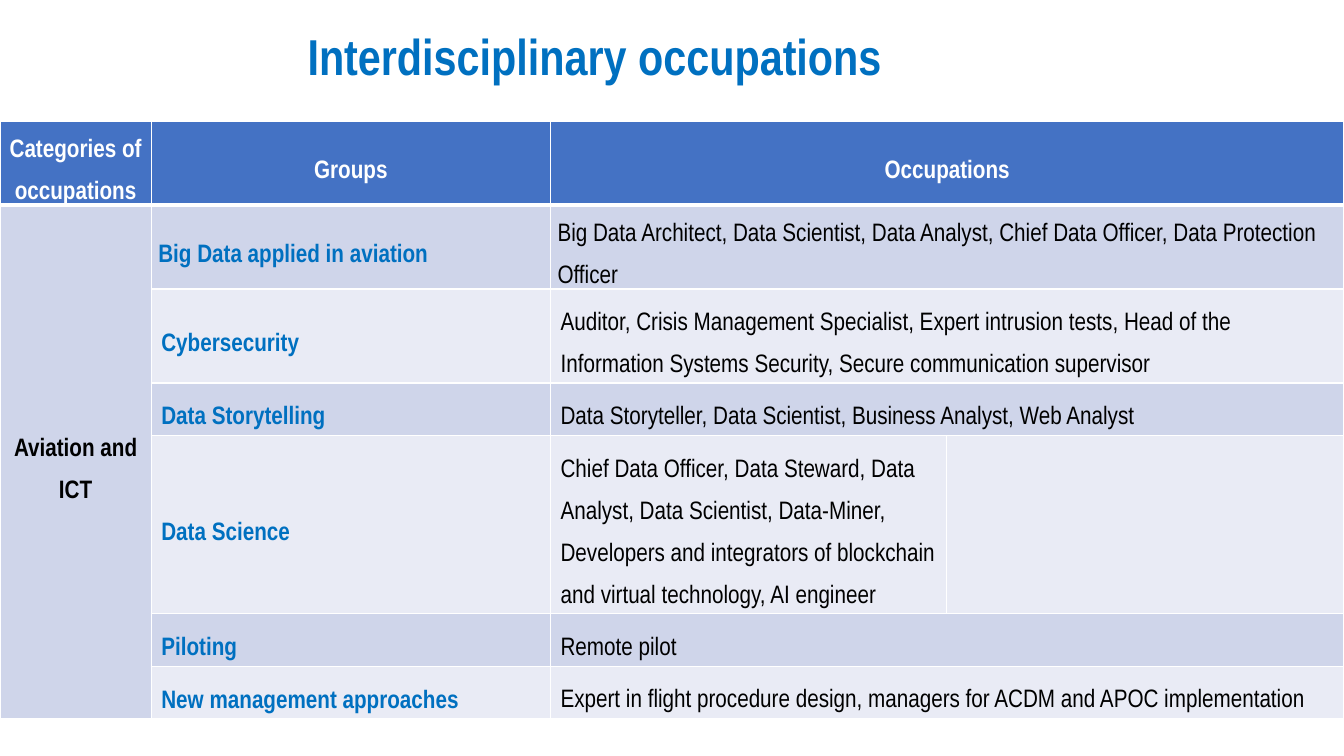
from lxml import etree
from pptx import Presentation
from pptx import util as u
from pptx.dml.color import RGBColor
from pptx.enum import text
from pptx.oxml import ns

FONT = "Arial Narrow"
BLUE = RGBColor(0x00, 0x70, 0xC0)
HEADER = RGBColor(0x44, 0x72, 0xC4)
BAND_DARK = RGBColor(0xCF, 0xD5, 0xEA)
BAND_LIGHT = RGBColor(0xE9, 0xEB, 0xF5)
WHITE = RGBColor(0xFF, 0xFF, 0xFF)
BLACK = RGBColor(0x00, 0x00, 0x00)

HEADINGS = ["Categories of occupations", "Groups", "Occupations"]
CATEGORY = "Aviation and ICT"
GROUPS = [
    ("Big Data applied in aviation",
     "Big Data Architect, Data Scientist, Data Analyst, Chief Data Officer, "
     "Data Protection Officer"),
    ("Cybersecurity",
     "Auditor, Crisis Management Specialist, Expert intrusion tests, Head of the "
     "Information Systems Security, Secure communication supervisor"),
    ("Data Storytelling",
     "Data Storyteller, Data Scientist, Business Analyst, Web Analyst"),
    ("Data Science",
     "Chief Data Officer, Data Steward, Data Analyst, Data Scientist, Data-Miner, "
     "Developers and integrators of blockchain and virtual technology, AI engineer"),
    ("Piloting", "Remote pilot"),
    ("New management approaches",
     "Expert in flight procedure design, managers for ACDM and APOC implementation"),
]
SPLIT_GROUP = "Data Science"  # its occupations fill only one of the two columns
COL_WIDTHS = [1.5, 3.96, 3.93, 3.94]
ROW_HEIGHTS = [0.83, 0.83, 0.93, 0.52, 1.77, 0.52, 0.52]


def write(tf, words, size=18, color=BLACK, bold=False,
          align=text.PP_ALIGN.LEFT, spacing=None):
    p = tf.paragraphs[0]
    p.alignment = align
    if spacing:
        p.line_spacing = u.Pt(spacing)
    r = p.add_run()
    r.text = words
    r.font.name, r.font.size, r.font.bold = FONT, u.Pt(size), bold
    r.font.color.rgb = color


def style_cell(cell, fill, bottom=1):
    """White borders, then the fill."""
    tcPr = cell._tc.get_or_add_tcPr()
    for side, width in (("L", 1), ("R", 1), ("T", 1), ("B", bottom)):
        ln = etree.SubElement(tcPr, ns.qn("a:ln" + side), w=str(u.Pt(width)))
        line_fill = etree.SubElement(ln, ns.qn("a:solidFill"))
        etree.SubElement(line_fill, ns.qn("a:srgbClr"), val=str(WHITE))
    cell.fill.solid()
    cell.fill.fore_color.rgb = fill


def fill_cell(cell, words, anchor=text.MSO_ANCHOR.MIDDLE, tight=False, **fmt):
    cell.vertical_anchor = anchor
    if tight:
        cell.margin_left = cell.margin_right = u.Inches(0.07)
        cell.margin_top = cell.margin_bottom = 0
    write(cell.text_frame, words, spacing=30, **fmt)


def add_title(s, left, top, width, height):
    sp = s.shapes.title
    sp.left, sp.top, sp.width, sp.height = map(u.Inches, (left, top, width, height))
    tf = sp.text_frame
    tf.word_wrap = True
    tf.auto_size = text.MSO_AUTO_SIZE.NONE
    tf.vertical_anchor = text.MSO_ANCHOR.TOP
    write(tf, "Interdisciplinary occupations", size=36, color=BLUE, bold=True)


def add_occupations(s, left, top):
    box = map(u.Inches, (left, top, sum(COL_WIDTHS), sum(ROW_HEIGHTS)))
    table = s.shapes.add_table(len(ROW_HEIGHTS), len(COL_WIDTHS), *box).table
    for col, width in zip(table.columns, COL_WIDTHS):
        col.width = u.Inches(width)
    for row, height in zip(table.rows, ROW_HEIGHTS):
        row.height = u.Inches(height)

    # Header and banded rows
    for i, row in enumerate(table.rows):
        for j, cell in enumerate(row.cells):
            if i == 0:
                style_cell(cell, HEADER, bottom=3)
            else:
                style_cell(cell, BAND_DARK if j == 0 or i % 2 else BAND_LIGHT)

    # Headings
    centred = dict(tight=True, bold=True, align=text.PP_ALIGN.CENTER)
    table.cell(0, 2).merge(table.cell(0, 3))
    for j, heading in enumerate(HEADINGS):
        fill_cell(table.cell(0, j), heading, color=WHITE, **centred)

    # Category beside all its groups
    table.cell(1, 0).merge(table.cell(len(GROUPS), 0))
    fill_cell(table.cell(1, 0), CATEGORY, **centred)

    # Groups and their occupations
    for i, (group, occupations) in enumerate(GROUPS, 1):
        if group != SPLIT_GROUP:
            table.cell(i, 2).merge(table.cell(i, 3))
        fill_cell(table.cell(i, 1), group, tight=i == 1, color=BLUE, bold=True)
        fill_cell(table.cell(i, 2), occupations, tight=i == 1,
                  anchor=text.MSO_ANCHOR.TOP)


def main():
    prs = Presentation()
    prs.slide_width, prs.slide_height = u.Inches(13.33), u.Inches(7.5)
    s = prs.slides.add_slide(prs.slide_layouts[5])
    add_title(s, 2.95, 0.2, 6.43, 0.71)
    add_occupations(s, 0, 1.2)
    prs.save("out.pptx")


if __name__ == "__main__":
    main()
